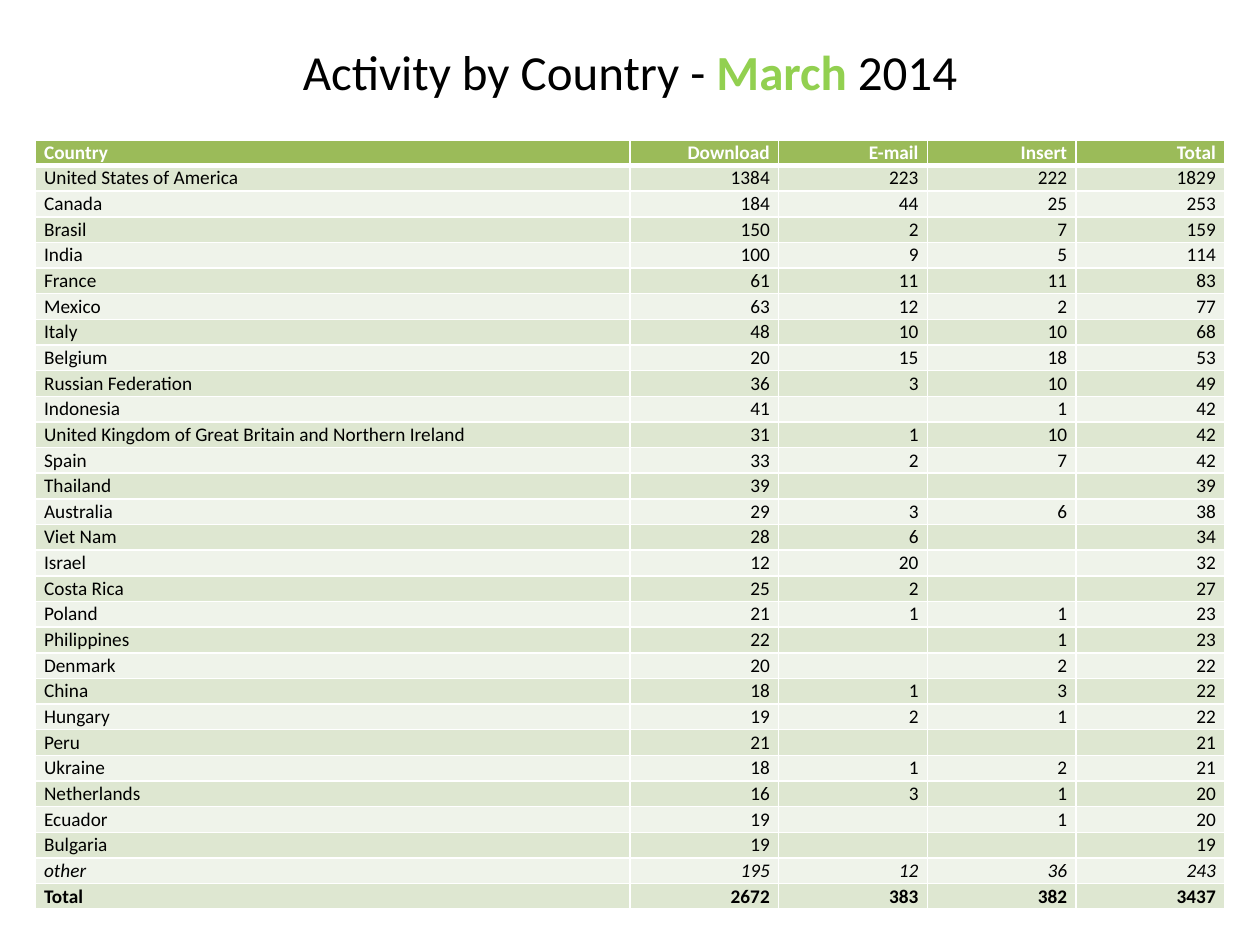
from typing import NamedTuple, Optional

from lxml.etree import SubElement
from pptx import Presentation
from pptx.dml.color import RGBColor
from pptx.enum.text import MSO_ANCHOR, MSO_AUTO_SIZE, PP_ALIGN
from pptx.oxml.ns import qn
from pptx.util import Inches, Pt

COLORS = {
    "text": "000000",
    "accent": "92D050",
    "header": "9BBB59",
    "header_text": "FFFFFF",
    "band_dark": "DEE7D1",
    "band_light": "EFF3EA",
    "grid": "FFFFFF",
}
FONT = "Calibri"
LEFT, WIDTH = 0.28, 9.44
TABLE_TOP, TABLE_HEIGHT = 1.11, 6.11
COLUMN_WIDTHS = [4.72, 1.18, 1.18, 1.18, 1.18]
HEADINGS = ["Country", "Download", "E-mail", "Insert", "Total"]
CELL_FORMAT = {
    "margin_left": Inches(0.07),
    "margin_right": Inches(0.07),
    "margin_top": 0,
    "margin_bottom": 0,
    "vertical_anchor": MSO_ANCHOR.MIDDLE,
}


class Activity(NamedTuple):
    country: str
    download: int
    email: Optional[int]
    insert: Optional[int]
    total: int


class RowStyle(NamedTuple):
    fill: str
    color: str = "text"
    bold: bool = False
    italic: bool = False
    top_line: int = 1
    bottom_line: int = 1


ACTIVITIES = [
    Activity("United States of America", 1384, 223, 222, 1829),
    Activity("Canada", 184, 44, 25, 253),
    Activity("Brasil", 150, 2, 7, 159),
    Activity("India", 100, 9, 5, 114),
    Activity("France", 61, 11, 11, 83),
    Activity("Mexico", 63, 12, 2, 77),
    Activity("Italy", 48, 10, 10, 68),
    Activity("Belgium", 20, 15, 18, 53),
    Activity("Russian Federation", 36, 3, 10, 49),
    Activity("Indonesia", 41, None, 1, 42),
    Activity("United Kingdom of Great Britain and Northern Ireland", 31, 1, 10, 42),
    Activity("Spain", 33, 2, 7, 42),
    Activity("Thailand", 39, None, None, 39),
    Activity("Australia", 29, 3, 6, 38),
    Activity("Viet Nam", 28, 6, None, 34),
    Activity("Israel", 12, 20, None, 32),
    Activity("Costa Rica", 25, 2, None, 27),
    Activity("Poland", 21, 1, 1, 23),
    Activity("Philippines", 22, None, 1, 23),
    Activity("Denmark", 20, None, 2, 22),
    Activity("China", 18, 1, 3, 22),
    Activity("Hungary", 19, 2, 1, 22),
    Activity("Peru", 21, None, None, 21),
    Activity("Ukraine", 18, 1, 2, 21),
    Activity("Netherlands", 16, 3, 1, 20),
    Activity("Ecuador", 19, None, 1, 20),
    Activity("Bulgaria", 19, None, None, 19),
    Activity("other", 195, 12, 36, 243),
    Activity("Total", 2672, 383, 382, 3437),
]


def add_run(paragraph, text: str, size: int, color: str,
            bold: bool = False, italic: bool = False) -> None:
    run = paragraph.add_run()
    run.text = text
    font_format = {"name": FONT, "size": Pt(size), "bold": bold, "italic": italic}
    for attribute, value in font_format.items():
        setattr(run.font, attribute, value)
    run.font.color.rgb = RGBColor.from_string(COLORS[color])


def add_borders(cell, top: int, bottom: int) -> None:
    properties = cell._tc.get_or_add_tcPr()
    for side, points in {"L": 1, "R": 1, "T": top, "B": bottom}.items():
        line = SubElement(properties, qn(f"a:ln{side}"), w=str(Pt(points)))
        fill = SubElement(line, qn("a:solidFill"))
        SubElement(fill, qn("a:srgbClr"), val=COLORS["grid"])


def style_for(row: int, label: str) -> RowStyle:
    if row == 0:
        return RowStyle("header", "header_text", bold=True, bottom_line=3)
    return RowStyle("band_dark" if row % 2 else "band_light",
                    bold=label == "Total", italic=label == "other",
                    top_line=3 if row == 1 else 1)


def fill_cell(cell, value, is_label: bool, style: RowStyle) -> None:
    for attribute, setting in CELL_FORMAT.items():
        setattr(cell, attribute, setting)
    add_borders(cell, style.top_line, style.bottom_line)
    cell.fill.solid()
    cell.fill.fore_color.rgb = RGBColor.from_string(COLORS[style.fill])
    entry = cell.text_frame.paragraphs[0]
    entry.alignment = PP_ALIGN.LEFT if is_label else PP_ALIGN.RIGHT
    if value is None:
        # Keeps an empty cell from stretching its row
        SubElement(entry._p, qn("a:endParaRPr"), sz="1100")
    else:
        add_run(entry, str(value), 11, style.color, style.bold, style.italic)


def add_title(slide) -> None:
    title = slide.shapes.add_textbox(
        Inches(LEFT), Inches(0.28), Inches(WIDTH), Inches(0.57)).text_frame
    title.word_wrap = True
    title.auto_size = MSO_AUTO_SIZE.SHAPE_TO_FIT_TEXT
    heading = title.paragraphs[0]
    heading.alignment = PP_ALIGN.CENTER
    add_run(heading, "Activity by Country - ", 28, "text")
    add_run(heading, "March", 28, "accent", bold=True)
    add_run(heading, " 2014", 28, "text")


def add_activity_table(slide) -> None:
    rows = [HEADINGS, *ACTIVITIES]
    activity_table = slide.shapes.add_table(
        len(rows), len(HEADINGS), Inches(LEFT), Inches(TABLE_TOP),
        Inches(WIDTH), Inches(TABLE_HEIGHT)).table
    for column, width in zip(activity_table.columns, COLUMN_WIDTHS):
        column.width = Inches(width)
    for row, values in enumerate(rows):
        activity_table.rows[row].height = Inches(TABLE_HEIGHT / len(rows))
        style = style_for(row, values[0])
        for column, value in enumerate(values):
            fill_cell(activity_table.cell(row, column), value, column == 0, style)


def main() -> None:
    presentation = Presentation()
    presentation.slide_width = Inches(10)
    presentation.slide_height = Inches(7.5)
    slide = presentation.slides.add_slide(presentation.slide_layouts[6])
    add_title(slide)
    add_activity_table(slide)
    presentation.save("out.pptx")


if __name__ == "__main__":
    main()
